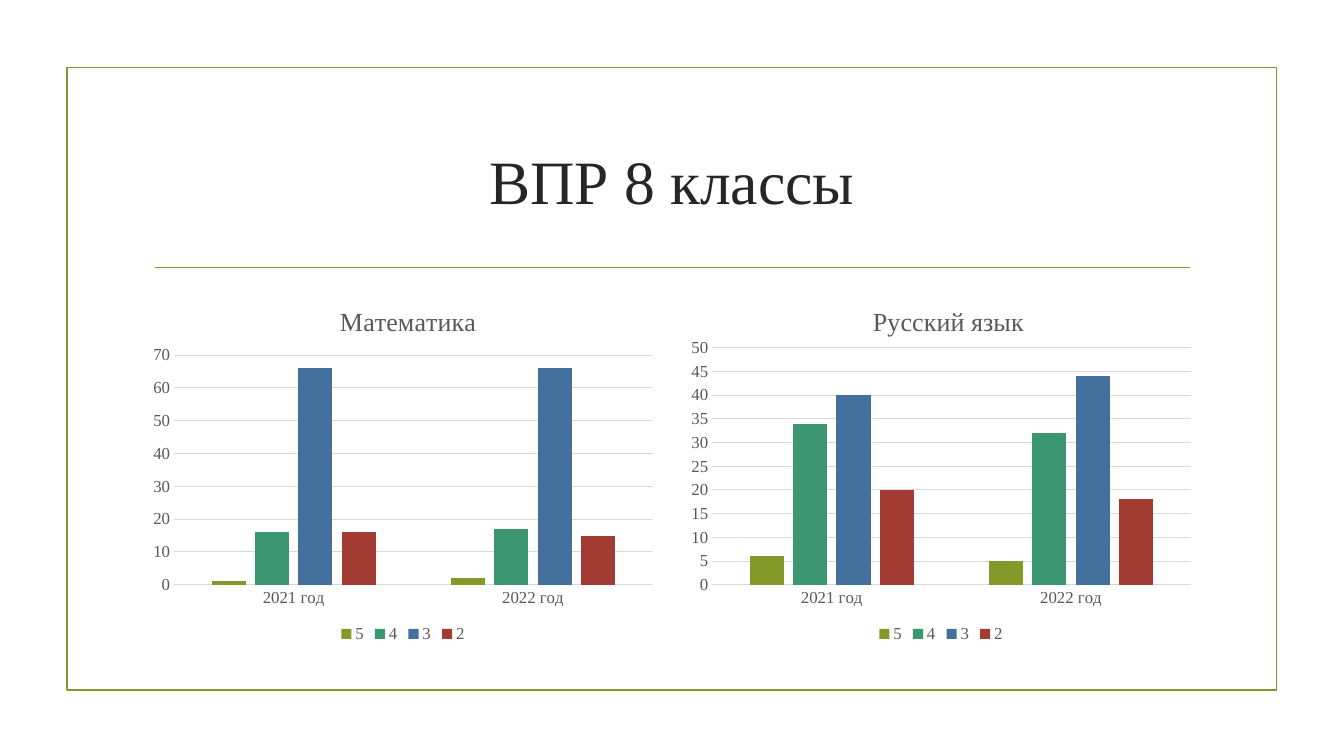
from lxml import etree
from pptx import Presentation
from pptx.chart.data import CategoryChartData
from pptx.dml.color import RGBColor
from pptx.enum.chart import XL_CHART_TYPE as ChartType, XL_LEGEND_POSITION as LegendPos
from pptx.enum.chart import XL_TICK_MARK as TickMark
from pptx.enum.shapes import MSO_CONNECTOR as Connector, MSO_SHAPE as Shape
from pptx.enum.text import MSO_ANCHOR as Anchor, PP_ALIGN as Align
from pptx.oxml.ns import qn
from pptx.util import Cm, Pt

THEME = {
    "font": "Times New Roman",
    "accent": RGBColor.from_string("83992A"),
    "title": RGBColor.from_string("262626"),
    "label": RGBColor.from_string("595959"),
    "grid": RGBColor.from_string("D9D9D9"),
    "marks": [RGBColor.from_string(c) for c in ("83992A", "3C9770", "44709D", "A23C33")],
    "title_size": Pt(44),
    "chart_title_size": Pt(18.6),
    "label_size": Pt(12),
    "rule_width": Pt(1.25),
    "grid_width": Pt(0.75),
}
YEARS = ["2021 год", "2022 год"]
MARKS = ["5", "4", "3", "2"]
SUBJECTS = [
    {"name": "Математика", "left": 3.6, "values": [(1, 2), (16, 17), (66, 66), (16, 15)],
     "top": 70, "step": 10, "title_at": {"x": 0.37, "y": 0.05},
     "plot": {"x": 0.06, "y": 0.2, "w": 0.92, "h": 0.63}},
    {"name": "Русский язык", "left": 17.16, "values": [(6, 5), (34, 32), (40, 44), (20, 18)],
     "top": 50, "step": 5, "title_at": {"x": 0.36, "y": 0.05},
     "plot": {"x": 0.06, "y": 0.18, "w": 0.92, "h": 0.65}},
]


def set_font(font, size, color):
    for key, value in {"name": THEME["font"], "size": size, "bold": False}.items():
        setattr(font, key, value)
    font.color.rgb = color


def make_layout(box, inner=False):
    layout = etree.Element(qn("c:layout"))
    manual = etree.SubElement(layout, qn("c:manualLayout"))
    entries = {"layoutTarget": "inner"} if inner else {}
    entries.update({"xMode": "edge", "yMode": "edge"})
    entries.update(box)
    for tag, value in entries.items():
        etree.SubElement(manual, qn("c:" + tag)).set("val", str(value))
    return layout


prs = Presentation()
prs.slide_width, prs.slide_height = Cm(33.87), Cm(19.05)
s = prs.slides.add_slide(prs.slide_layouts[6])

frame = s.shapes.add_shape(Shape.RECTANGLE, Cm(1.69), Cm(1.7), Cm(30.48), Cm(15.68))
frame.shadow.inherit = False
frame.fill.background()
rule = s.shapes.add_connector(Connector.STRAIGHT, Cm(3.9), Cm(6.74), Cm(30), Cm(6.74))
etree.SubElement(rule._element.spPr, qn("a:effectLst"))
for sp in (frame, rule):
    sp.line.color.rgb = THEME["accent"]
    sp.line.width = THEME["rule_width"]
rule._element.spPr.append(rule._element.spPr.find(qn("a:effectLst")))

title = s.shapes.add_textbox(Cm(3.6), Cm(2.72), Cm(26.67), Cm(3.63))
tf = title.text_frame
tf.word_wrap = True
tf.vertical_anchor = Anchor.MIDDLE
p = tf.paragraphs[0]
p.alignment = Align.CENTER
r = p.add_run()
r.text = "ВПР 8 классы"
set_font(r.font, THEME["title_size"], THEME["title"])

for subject in SUBJECTS:
    data = CategoryChartData()
    data.categories = YEARS
    for mark, values in zip(MARKS, subject["values"]):
        data.add_series(mark, values)
    chart = s.shapes.add_chart(ChartType.COLUMN_CLUSTERED, Cm(subject["left"]), Cm(7.11),
                               Cm(13.11), Cm(9.19), data).chart
    set_font(chart.font, THEME["label_size"], THEME["label"])

    chart.has_title = True
    p = chart.chart_title.text_frame.paragraphs[0]
    r = p.add_run()
    r.text = subject["name"]
    set_font(r.font, THEME["chart_title_size"], THEME["label"])
    chart_title = chart.chart_title._element
    for old in chart_title.findall(qn("c:layout")):
        chart_title.remove(old)
    chart_title.find(qn("c:tx")).addnext(make_layout(subject["title_at"]))

    chart.has_legend = True
    chart.legend.position = LegendPos.BOTTOM
    chart.legend.include_in_layout = False

    plot = chart.plots[0]
    for key, value in {"gap_width": 219, "overlap": -27, "vary_by_categories": False}.items():
        setattr(plot, key, value)
    for series, color in zip(plot.series, THEME["marks"]):
        series.format.fill.solid()
        series.format.fill.fore_color.rgb = color

    cat_axis, val_axis = chart.category_axis, chart.value_axis
    for key, value in {"minimum_scale": 0, "maximum_scale": subject["top"],
                       "major_unit": subject["step"], "has_major_gridlines": True}.items():
        setattr(val_axis, key, value)
    for axis in (cat_axis, val_axis):
        axis.major_tick_mark = axis.minor_tick_mark = TickMark.NONE
        set_font(axis.tick_labels.font, THEME["label_size"], THEME["label"])
    for line in (cat_axis.format.line, val_axis.major_gridlines.format.line):
        line.color.rgb = THEME["grid"]
        line.width = THEME["grid_width"]
    val_axis.format.line.fill.background()

    plot_area = chart._chartSpace.chart.plotArea
    for old in plot_area.findall(qn("c:layout")):
        plot_area.remove(old)
    plot_area.insert(0, make_layout(subject["plot"], inner=True))

prs.save("out.pptx")
